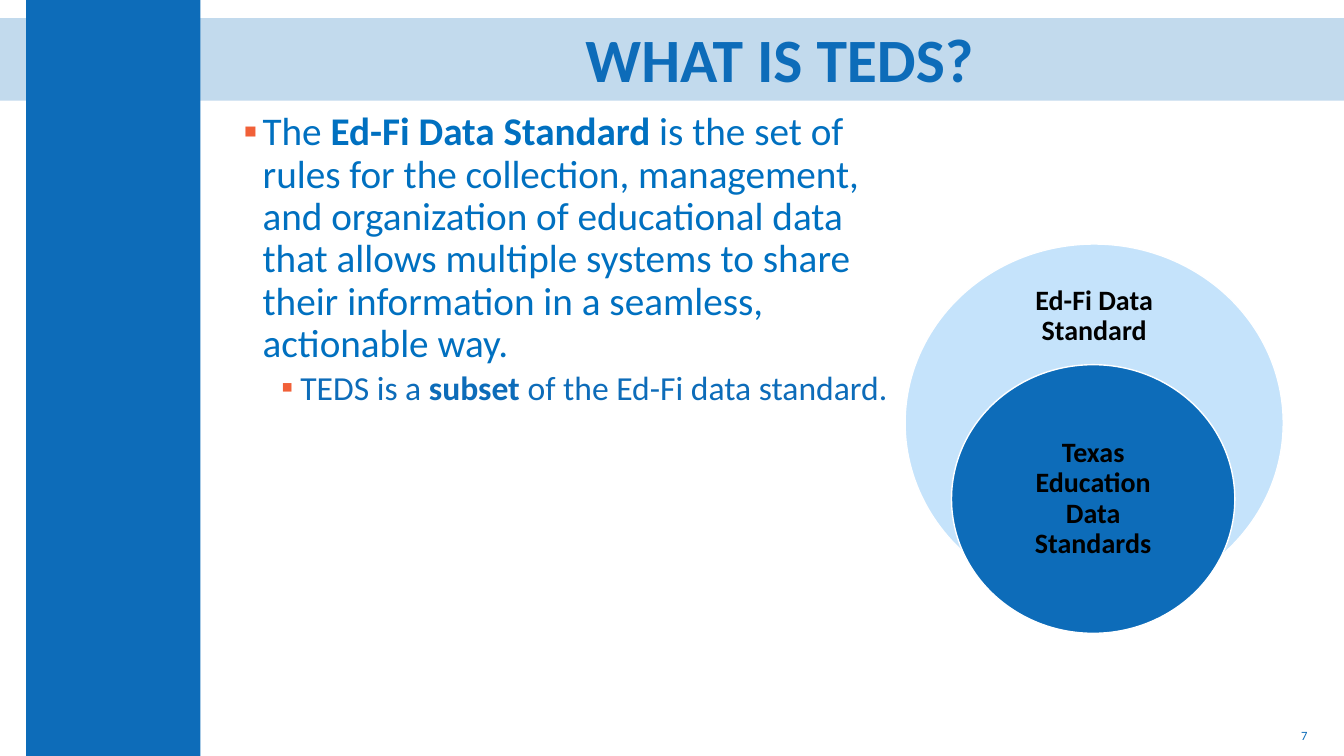
from dataclasses import dataclass

from lxml.etree import SubElement
from pptx import Presentation
from pptx.dml.color import RGBColor
from pptx.enum.shapes import MSO_SHAPE as SHAPE
from pptx.enum.text import MSO_ANCHOR as ANCHOR, MSO_AUTO_SIZE as AUTO, PP_ALIGN as ALIGN
from pptx.oxml.ns import qn
from pptx.util import Cm, Pt


@dataclass(frozen=True)
class Theme:
    font: str = "Calibri"
    blue: str = "0D6CB9"
    text_blue: str = "0070C0"
    pale: str = "C5E3FB"
    orange: str = "F16038"
    white: str = "FFFFFF"
    black: str = "000000"
    title: int = 44
    body: int = 28
    sub: int = 24
    label: int = 20
    number: int = 9


T = Theme()


def lengths(*values):
    return [Cm(v) for v in values]


def set_frame(tf, anchor=ANCHOR.MIDDLE, side=0.25, top=0.13):
    tf.word_wrap = True
    tf.auto_size = AUTO.NONE
    tf.vertical_anchor = anchor
    tf.margin_left = tf.margin_right = Cm(side)
    tf.margin_top = tf.margin_bottom = Cm(top)


def add_bullet(p, indent):
    pPr = p._p.get_or_add_pPr()
    pPr.set("marL", str(Cm(indent)))
    pPr.set("indent", str(-Cm(0.48)))
    SubElement(SubElement(pPr, qn("a:buClr")), qn("a:srgbClr"), val=T.orange)
    SubElement(pPr, qn("a:buFont"), typeface=T.font)
    SubElement(pPr, qn("a:buChar"), char="▪")


def write(p, *parts, size, color, bold=False, align=ALIGN.LEFT, spacing=0.9, before=0):
    """Add runs to a paragraph; a part given as a one-item list is bold."""
    p.alignment = align
    p.line_spacing = spacing
    p.space_before = Pt(before)
    for part in parts:
        strong = isinstance(part, list)
        r = p.add_run()
        r.text = part[0] if strong else part
        r.font.name = T.font
        r.font.size = Pt(size)
        r.font.bold = bold or strong
        r.font.color.rgb = RGBColor.from_string(color)


def add_filled(s, kind, box, fill, line=None, alpha=None):
    sp = s.shapes.add_shape(kind, *lengths(*box))
    sp.shadow.inherit = False
    sp.fill.solid()
    sp.fill.fore_color.rgb = RGBColor.from_string(fill)
    if alpha is not None:
        color = sp._element.spPr.find(qn("a:solidFill"))[0]
        SubElement(color, qn("a:alpha"), val=str(alpha * 1000))
    if line:
        sp.line.color.rgb = RGBColor.from_string(line)
        sp.line.width = Pt(1)
    else:
        sp.line.fill.background()
    return sp


def add_text_box(s, box, **frame):
    tf = s.shapes.add_textbox(*lengths(*box)).text_frame
    set_frame(tf, **frame)
    return tf


def add_title(s, text):
    title = s.shapes.title
    title.left, title.top, title.width, title.height = lengths(5.59, 0.46, 28.12, 2.24)
    set_frame(title.text_frame)
    write(title.text_frame.paragraphs[0], text, size=T.title, color=T.blue,
          bold=True, align=ALIGN.CENTER)
    s.shapes._spTree.append(title._element)  # bring in front of the bands


def add_body(s):
    tf = add_text_box(s, (5.89, 2.69, 16.92, 14.76), anchor=ANCHOR.TOP)
    p = tf.paragraphs[0]
    add_bullet(p, 0.48)
    write(p, "The ", ["Ed-Fi Data Standard "],
          "is the set of rules for the collection, management, and organization of "
          "educational data that allows multiple systems to share their information "
          "in a seamless, actionable way.", size=T.body, color=T.text_blue)
    p = tf.add_paragraph()
    p.level = 1
    add_bullet(p, 1.43)
    write(p, "TEDS is a ", ["subset"], " of the Ed-Fi data standard.",
          size=T.sub, color=T.blue, before=3.8)


def add_nested_circles(s):
    label = dict(size=T.label, color=T.black, bold=True, align=ALIGN.CENTER)
    add_filled(s, SHAPE.OVAL, (22.81, 6.15, 9.53, 9.02), T.pale, line=T.white)
    tf = add_text_box(s, (25.99, 7, 3.17, 1.95), side=0, top=0)
    write(tf.paragraphs[0], "Ed-Fi Data Standard", **label)
    inner = add_filled(s, SHAPE.OVAL, (23.98, 9.19, 7.14, 6.77), T.blue, line=T.white)
    set_frame(inner.text_frame, side=0.9, top=0)
    write(inner.text_frame.paragraphs[0], "Texas Education Data Standards", **label)


def main():
    prs = Presentation()
    prs.slide_width, prs.slide_height = lengths(33.87, 19.05)
    s = prs.slides.add_slide(prs.slide_layouts[5])
    add_filled(s, SHAPE.RECTANGLE, (0, 0.46, 33.87, 2.08), T.blue, alpha=25)
    add_filled(s, SHAPE.RECTANGLE, (0.66, 0, 4.39, 19.05), T.blue)
    add_title(s, "WHAT IS TEDS?")
    add_body(s)
    add_nested_circles(s)
    number = add_text_box(s, (25.58, 18.03, 7.62, 1.02))
    write(number.paragraphs[0], "7", size=T.number, color=T.blue,
          align=ALIGN.RIGHT, spacing=1.0)
    prs.save("out.pptx")


if __name__ == "__main__":
    main()
